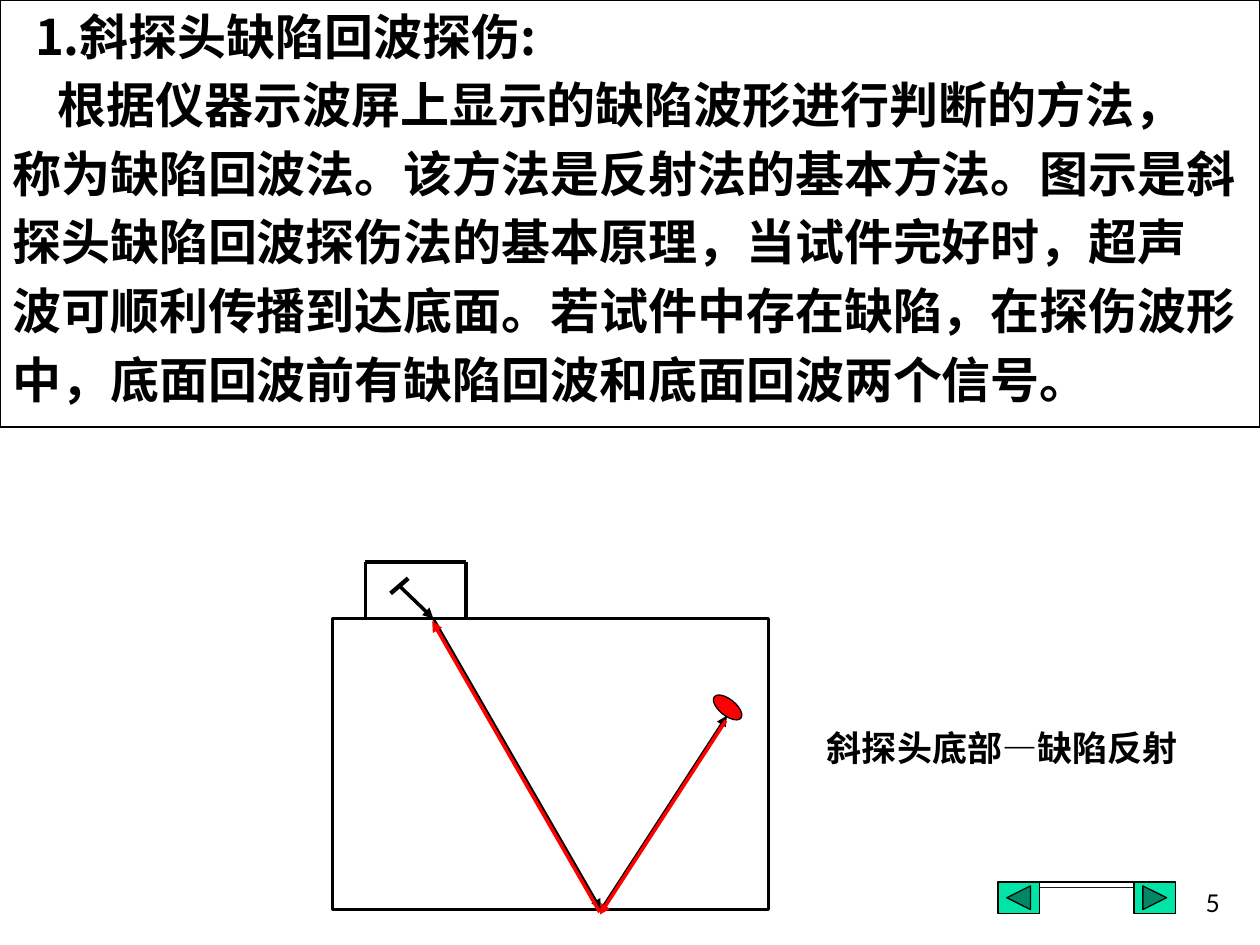
from lxml import etree
from pptx import Presentation, util as u
from pptx.dml.color import RGBColor
from pptx.enum import shapes, text
from pptx.oxml.ns import qn

BLACK = RGBColor(0, 0, 0)
WHITE = RGBColor(255, 255, 255)
RED = RGBColor(255, 0, 0)
GREEN = RGBColor(0x00, 0xE4, 0xA8)
BLUE = RGBColor(0x33, 0x33, 0xCC)
CJK = "Noto Sans CJK SC"
SHAPE = shapes.MSO_SHAPE
ALIGN = text.PP_ALIGN
ANCHOR = text.MSO_ANCHOR

BODY = [
    ("1.斜探头缺陷回波探伤:", 0.18),
    ("根据仪器示波屏上显示的缺陷波形进行判断的方法，", 0.36),
    ("称为缺陷回波法。该方法是反射法的基本方法。图示是斜", 0),
    ("探头缺陷回波探伤法的基本原理，当试件完好时，超声", 0),
    ("波可顺利传播到达底面。若试件中存在缺陷，在探伤波形", 0),
    ("中，底面回波前有缺陷回波和底面回波两个信号。", 0),
]
LABEL = "斜探头底部—缺陷反射"
PAGE_NUMBER = "5"

HOUSE = [(8.62, 6.92), (8.42, 7.09), (8.5, 7.09), (8.5, 7.25), (8.58, 7.25), (8.58, 7.11),
         (8.67, 7.11), (8.67, 7.25), (8.76, 7.25), (8.76, 7.08), (8.83, 7.08)]
BUTTONS = [(SHAPE.ACTION_BUTTON_BACK_OR_PREVIOUS, 7.92),
           (SHAPE.ACTION_BUTTON_FORWARD_OR_NEXT, 9)]

SURFACE = 4.91
ENTRY, BOTTOM, DEFECT = (3.44, SURFACE), (4.77, 7.22), (5.77, 5.68)
PROBE_LEFT, PROBE_RIGHT, PROBE_TOP = 2.9, 3.7, 4.46
PROBE = [(PROBE_LEFT, SURFACE), (PROBE_LEFT, PROBE_TOP),
         (PROBE_RIGHT, PROBE_TOP), (PROBE_RIGHT, SURFACE)]
LINES = [
    (ENTRY, BOTTOM, BLACK, 1.5, True),
    (BOTTOM, DEFECT, BLACK, 1.5, True),
    ((3.17, 4.65), ENTRY, BLACK, 2, True),
    *[(start, end, BLACK, 2, False) for start, end in zip(PROBE, PROBE[1:])],
    ((3.1, 4.71), (3.24, 4.59), BLACK, 2.5, False),
    ((5.76, 5.72), (4.76, 7.26), RED, 2, True),
    ((4.76, 7.24), (3.43, 4.93), RED, 2, True),
]


def inches(*values):
    return [u.Inches(value) for value in values]


def outline(shape, width):
    shape.shadow.inherit = False
    shape.line.color.rgb = BLACK
    shape.line.width = u.Pt(width)


def add_box(slide, kind, box, fill, width=0.75):
    shape = slide.shapes.add_shape(kind, *inches(*box))
    outline(shape, width)
    shape.fill.solid()
    shape.fill.fore_color.rgb = fill
    return shape


def add_line(slide, start, end, color, width, arrow):
    line = slide.shapes.add_connector(shapes.MSO_CONNECTOR.STRAIGHT, *inches(*start, *end))
    line.line.color.rgb = color
    line.line.width = u.Pt(width)
    if arrow:
        etree.SubElement(line.line._get_or_add_ln(), qn("a:tailEnd"), type="triangle")
    etree.SubElement(line._element.spPr, qn("a:effectLst"))


def write(paragraph, words, size, font, bold, align):
    paragraph.alignment = align
    run = paragraph.add_run()
    run.text = words
    run.font.size = u.Pt(size)
    run.font.name = font
    run.font.bold = bold
    run.font.color.rgb = BLACK
    etree.SubElement(run.font._element, qn("a:ea"), typeface=CJK)


def add_text(slide, box, anchor, *style):
    frame = slide.shapes.add_textbox(*inches(*box)).text_frame
    frame.word_wrap = True
    frame.vertical_anchor = anchor
    write(frame.paragraphs[0], *style)


def add_house(slide):
    builder = slide.shapes.build_freeform(*HOUSE[0], scale=u.Inches(1))
    builder.add_line_segments(HOUSE[1:], close=True)
    house = builder.convert_to_shape()
    outline(house, 0.75)
    house.fill.gradient()
    house.fill.gradient_angle = 270
    for stop, color, position in zip(house.fill.gradient_stops, (BLUE, WHITE), (0, 1)):
        stop.color.rgb = color
        stop.position = position
    effects = house._element.spPr.find(qn("a:effectLst"))
    shadow = etree.SubElement(effects, qn("a:outerShdw"), dist=str(u.Pt(5)),
                              dir=str(37 * 60000), algn="ctr", rotWithShape="0")
    etree.SubElement(shadow, qn("a:srgbClr"), val="1C1C1C")


def add_body(slide):
    frame = add_box(slide, SHAPE.RECTANGLE, (0, 0, 10, 3.39), WHITE).text_frame
    frame.word_wrap = True
    frame.vertical_anchor = ANCHOR.TOP
    for index, (words, indent) in enumerate(BODY):
        paragraph = frame.add_paragraph() if index else frame.paragraphs[0]
        write(paragraph, words, 28, CJK, True, ALIGN.LEFT)
        paragraph.line_spacing = u.Pt(33.6)
        paragraph.space_before = u.Pt(5.6)
        paragraph._p.get_or_add_pPr().set("marL", str(u.Inches(indent)))


def main():
    presentation = Presentation()
    presentation.slide_width, presentation.slide_height = inches(10, 7.5)
    slide = presentation.slides.add_slide(presentation.slide_layouts[6])
    add_house(slide)
    for kind, left in BUTTONS:
        add_box(slide, kind, (left, 7, 0.33, 0.25), GREEN)
    add_text(slide, (7.7, 6.83, 2.08, 0.5), ANCHOR.BOTTOM,
             PAGE_NUMBER, 14, "Lato", False, ALIGN.RIGHT)
    add_box(slide, SHAPE.RECTANGLE, (2.64, SURFACE, 3.46, 2.31), WHITE, 2)
    add_body(slide)
    add_text(slide, (6.42, 5.72, 3.07, 0.43), ANCHOR.TOP,
             LABEL, 20, "Arial", True, ALIGN.CENTER)
    for line in LINES:
        add_line(slide, *line)
    defect = add_box(slide, SHAPE.OVAL, (5.64, 5.55, 0.27, 0.13), RED)
    defect.rotation = 38.9
    presentation.save("out.pptx")


if __name__ == "__main__":
    main()
